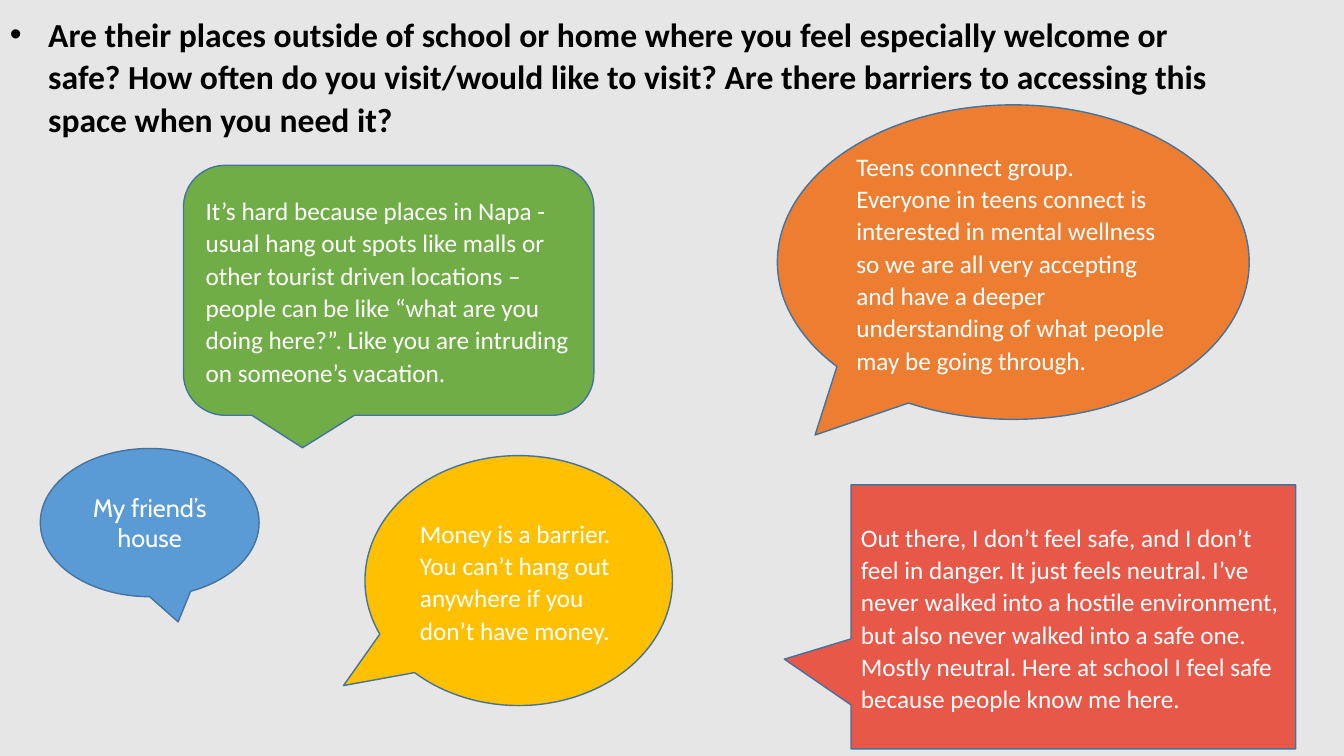
from lxml import etree
from pptx import Presentation
from pptx.dml.color import RGBColor
from pptx.enum import shapes, text
from pptx.oxml import ns
from pptx.util import Inches, Pt

BACK = RGBColor(0xE7, 0xE6, 0xE6)
BLACK = RGBColor(0, 0, 0)
WHITE = RGBColor(0xFF, 0xFF, 0xFF)
EDGE = RGBColor(0x43, 0x73, 0x9E)
RED = RGBColor(0xE7, 0x58, 0x49)
GOLD = RGBColor(0xFF, 0xC0, 0x00)
GREEN = RGBColor(0x70, 0xAD, 0x47)
ORANGE = RGBColor(0xED, 0x7D, 0x31)
BLUE = RGBColor(0x5B, 0x9B, 0xD5)

KIND = shapes.MSO_SHAPE
OVAL = KIND.OVAL_CALLOUT
LEFT = text.PP_ALIGN.LEFT
CENTER = text.PP_ALIGN.CENTER

QUESTION = (
    "Are their places outside of school or home where you feel especially "
    "welcome or safe? How often do you visit/would like to visit? Are there "
    "barriers to accessing this space when you need it?"
)
NEUTRAL = (
    "Out there, I don’t feel safe, and I don’t feel in danger. It just feels "
    "neutral. I’ve never walked into a hostile environment, but also never "
    "walked into a safe one. Mostly neutral. Here at school I feel safe "
    "because people know me here."
)
MONEY = (
    "Money is a barrier. You can’t hang out anywhere if you don’t have money."
)
TOURISTS = (
    "It’s hard because places in Napa - usual hang out spots like malls or "
    "other tourist driven locations – people can be like “what are you doing "
    "here?”. Like you are intruding on someone’s vacation."
)
GROUP = (
    "Teens connect group. Everyone in teens connect is interested in mental "
    "wellness so we are all very accepting and have a deeper understanding "
    "of what people may be going through."
)
FRIEND = "My friend’s house"


def style(para, words, size, color, name="Calibri", bold=False):
    para.text = words
    font = para.font
    font.name = name
    font.size = Pt(size)
    font.bold = bold
    font.color.rgb = color


def add_bullet(para, indent):
    props = para._p.get_or_add_pPr()
    props.set("marL", str(indent))
    props.set("indent", str(-indent))
    face = etree.SubElement(props, ns.qn("a:buFont"))
    face.set("typeface", "Arial")
    mark = etree.SubElement(props, ns.qn("a:buChar"))
    mark.set("char", "•")


def add_question(slide):
    box = slide.shapes.add_textbox(
        Inches(0), Inches(0.07), Inches(12.14), Inches(1.36)
    )
    frame = box.text_frame
    frame.word_wrap = True
    para = frame.paragraphs[0]
    add_bullet(para, Inches(0.38))
    para.line_spacing = 1.05
    style(para, QUESTION, 24, BLACK, bold=True)


def add_bubble(slide, kind, place, tail, fill, words,
               name="Calibri", align=LEFT, space=1.07):
    shape = slide.shapes.add_shape(kind, *map(Inches, place))
    shape.shadow.inherit = False
    shape.adjustments[0], shape.adjustments[1] = tail
    shape.fill.solid()
    shape.fill.fore_color.rgb = fill
    shape.line.color.rgb = EDGE
    shape.line.width = Pt(1)
    frame = shape.text_frame
    frame.word_wrap = True
    frame.vertical_anchor = text.MSO_ANCHOR.MIDDLE
    para = frame.paragraphs[0]
    para.alignment = align
    para.line_spacing = space
    style(para, words, 18, WHITE, name)


def main():
    deck = Presentation()
    deck.slide_width = Inches(13.33)
    deck.slide_height = Inches(7.5)
    slide = deck.slides.add_slide(deck.slide_layouts[6])
    slide.background.fill.solid()
    slide.background.fill.fore_color.rgb = BACK

    add_question(slide)
    add_bubble(slide, KIND.RECTANGULAR_CALLOUT, (8.44, 4.81, 4.41, 2.62),
               (-0.65, 0.16), RED, NEUTRAL)
    add_bubble(slide, OVAL, (3.62, 4.52, 3.05, 2.48),
               (-0.57, 0.42), GOLD, MONEY)
    add_bubble(slide, KIND.ROUNDED_RECTANGULAR_CALLOUT,
               (1.82, 1.64, 4.07, 2.48), (-0.21, 0.63), GREEN, TOURISTS)
    add_bubble(slide, OVAL, (7.71, 1.04, 4.68, 3.12),
               (-0.42, 0.55), ORANGE, GROUP)
    add_bubble(slide, OVAL, (0.4, 4.45, 2.17, 1.47),
               (0.13, 0.67), BLUE, FRIEND, "Cabin", CENTER, 1.0)

    deck.save("out.pptx")


if __name__ == "__main__":
    main()
